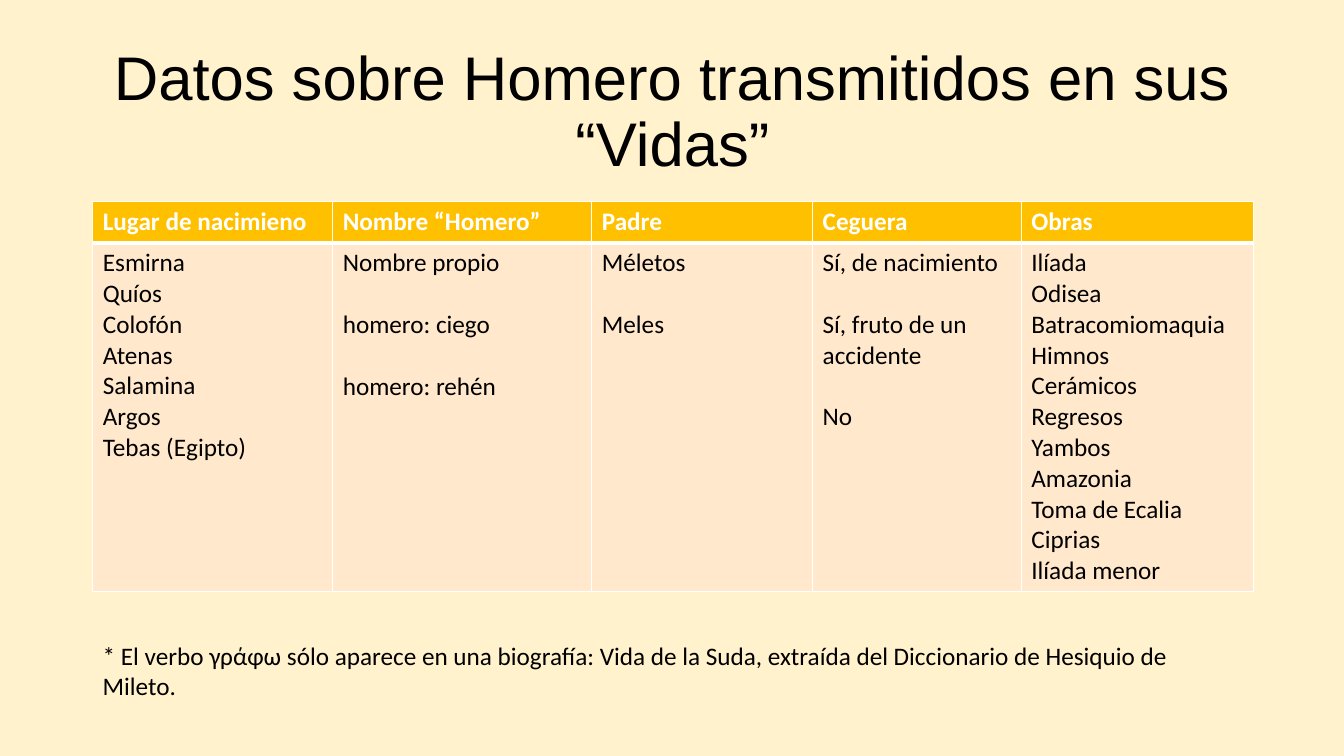
from lxml import etree
from pptx import Presentation, util as u
from pptx.dml.color import RGBColor
from pptx.enum import text
from pptx.oxml.ns import qn

WIDTH, HEIGHT = 13.33, 7.5
LEFT, CONTENT_WIDTH = 0.92, 11.5
CREAM, GOLD, PEACH, WHITE, BLACK = "FFF2CC", "FFC000", "FFE8CC", "FFFFFF", "000000"
LINE_GAP = 22  # points, one line of 18 pt text

# heading, column width, entries, whether entries stand apart
COLUMNS = [
    ("Lugar de nacimieno", 2.38,
     ["Esmirna", "Quíos", "Colofón", "Atenas", "Salamina", "Argos", "Tebas (Egipto)"], False),
    ("Nombre “Homero”", 2.57, ["Nombre propio", "homero: ciego", "homero: rehén"], True),
    ("Padre", 2.19, ["Méletos", "Meles"], True),
    ("Ceguera", 2.07, ["Sí, de nacimiento", "Sí, fruto de un accidente", "No"], True),
    ("Obras", 2.3,
     ["Ilíada", "Odisea", "Batracomiomaquia", "Himnos", "Cerámicos", "Regresos", "Yambos",
      "Amazonia", "Toma de Ecalia", "Ciprias", "Ilíada menor"], False),
]


def color(value):
    return RGBColor.from_string(value)


def inches(*lengths):
    return [u.Inches(length) for length in lengths]


def add_run(paragraph, words, size=18, font="Calibri", ink=BLACK, bold=False):
    run = paragraph.add_run()
    run.text = words
    run.font.size, run.font.name, run.font.bold = u.Pt(size), font, bold
    run.font.color.rgb = color(ink)


def add_title(slide, box):
    title = slide.shapes.title
    title.left, title.top, title.width, title.height = inches(*box)
    frame = title.text_frame
    frame.auto_size = text.MSO_AUTO_SIZE.NONE
    frame.vertical_anchor = text.MSO_ANCHOR.MIDDLE
    heading = frame.paragraphs[0]
    heading.alignment = text.PP_ALIGN.CENTER
    heading.line_spacing = 0.9
    add_run(heading, "Datos sobre Homero transmitidos en sus “Vidas”", 44, "Arial")


def set_borders(cell, **widths):
    """Draw white borders 1 pt wide, except on the sides (L, R, T, B) given a width."""
    properties = cell._tc.get_or_add_tcPr()
    for position, side in enumerate("LRTB"):
        line = etree.Element(qn(f"a:ln{side}"), w=str(u.Pt(widths.get(side, 1))))
        fill = etree.SubElement(line, qn("a:solidFill"))
        etree.SubElement(fill, qn("a:srgbClr"), val=WHITE)
        properties.insert(position, line)


def fill_cell(cell, entries, background, ink, bold=False, gap=0, **widths):
    cell.fill.solid()
    cell.fill.fore_color.rgb = color(background)
    set_borders(cell, **widths)
    frame = cell.text_frame
    for index, entry in enumerate(entries):
        paragraph = frame.add_paragraph() if index else frame.paragraphs[0]
        if index and gap:
            paragraph.space_before = u.Pt(gap)
        add_run(paragraph, entry, ink=ink, bold=bold)


def add_data_table(slide, box, header_height=0.41):
    table = slide.shapes.add_table(2, len(COLUMNS), *inches(*box)).table
    table.rows[0].height, table.rows[1].height = inches(header_height, box[3] - header_height)
    for index, (heading, width, entries, apart) in enumerate(COLUMNS):
        table.columns[index].width = u.Inches(width)
        fill_cell(table.cell(0, index), [heading], GOLD, WHITE, bold=True, B=3)
        fill_cell(table.cell(1, index), entries, PEACH, BLACK,
                  gap=LINE_GAP if apart else 0, T=3)


def add_footnote(slide, box):
    frame = slide.shapes.add_textbox(*inches(*box)).text_frame
    frame.word_wrap = True
    frame.auto_size = text.MSO_AUTO_SIZE.SHAPE_TO_FIT_TEXT
    add_run(frame.paragraphs[0],
            "* El verbo γράφω sólo aparece en una biografía: Vida de la Suda, "
            "extraída del Diccionario de Hesiquio de Mileto.")


def main():
    deck = Presentation()
    deck.slide_width, deck.slide_height = inches(WIDTH, HEIGHT)
    slide = deck.slides.add_slide(deck.slide_layouts.get_by_name("Title Only"))
    slide.background.fill.solid()
    slide.background.fill.fore_color.rgb = color(CREAM)
    add_title(slide, (LEFT, 0.4, CONTENT_WIDTH, 1.45))
    add_data_table(slide, (LEFT, 2, CONTENT_WIDTH, 3.81))
    add_footnote(slide, (LEFT, 6.3, CONTENT_WIDTH, 0.71))
    deck.save("out.pptx")


if __name__ == "__main__":
    main()
